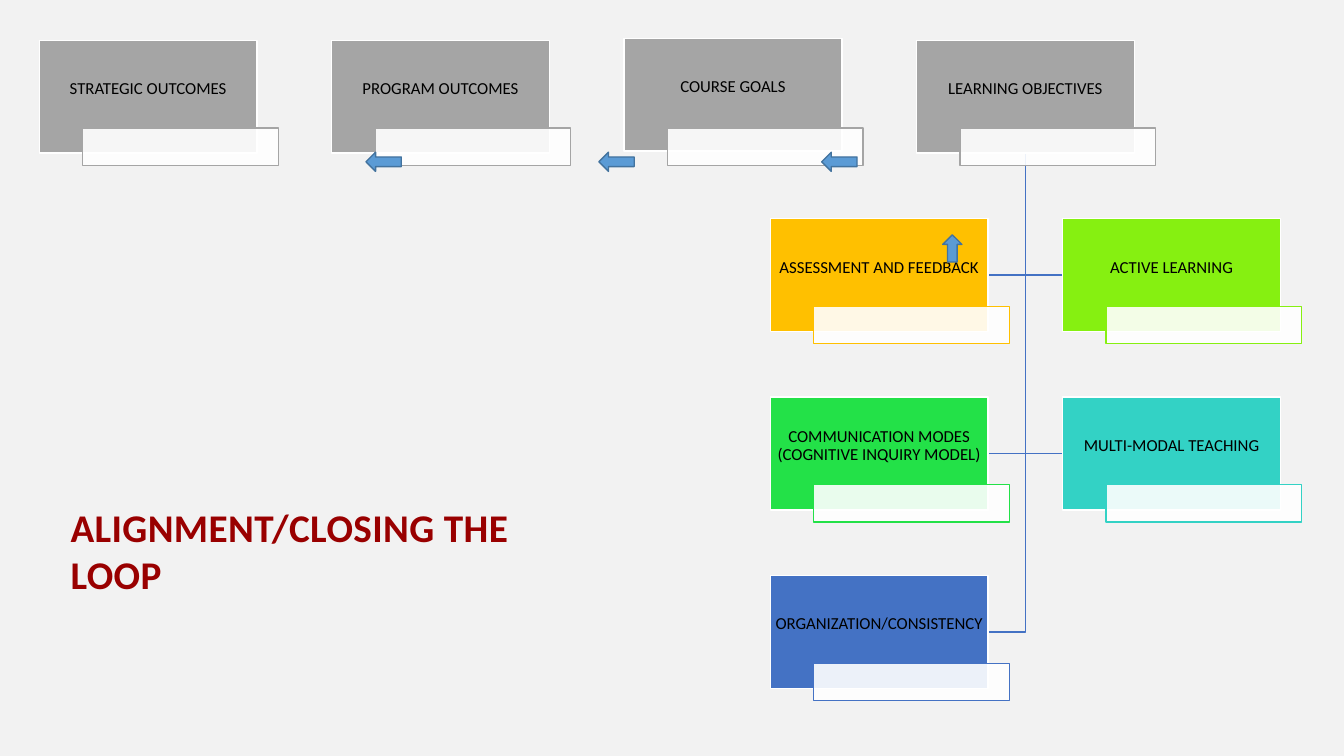
from lxml.etree import SubElement as Sub
from pptx import Presentation
from pptx.dml.color import RGBColor
from pptx.enum.shapes import MSO_SHAPE as Shape
from pptx.enum.text import MSO_ANCHOR as Anchor, MSO_AUTO_SIZE as Fit, PP_ALIGN as Align
from pptx.oxml.ns import qn
from pptx.util import Inches, Pt

GREY, BLUE, WHITE = "A5A5A5", "4472C4", "FFFFFF"


def rgb(code):
    """Turn a hex string into a colour."""
    return RGBColor.from_string(code)


class Board:
    """Style, grid and current slide of the alignment chart."""

    left, top = 0.39, 0.4
    col, row = 1.45, 1.77
    wide, high = 2.16, 1.12
    face = "Calibri"

    def __init__(self, deck):
        """Add a slide with a pale background."""
        self.slide = deck.slides.add_slide(deck.slide_layouts[5])
        self.shapes = self.slide.shapes
        fill = self.slide.background.fill
        fill.solid()
        fill.fore_color.rgb = rgb("F2F2F2")

    def spot(self, col, row):
        """Return the corner of a grid cell in inches."""
        return self.left + col * self.col, self.top + row * self.row

    def font(self, para, size, color, bold=False):
        """Set the font of a paragraph."""
        font = para.font
        font.name, font.size, font.bold = self.face, Pt(size), bold
        font.color.rgb = rgb(color)

    def block(self, kind, x, y, w, h, fill, edge):
        """Draw a filled preset shape."""
        shape = self.shapes.add_shape(kind, *map(Inches, (x, y, w, h)))
        shape.shadow.inherit = False
        shape.fill.solid()
        shape.fill.fore_color.rgb = rgb(fill)
        shape.line.color.rgb = rgb(edge)
        shape.line.width = Pt(1)
        return shape

    def card(self, text, col, row, color, lift=0):
        """Draw a labelled box with its translucent tab."""
        x, y = self.spot(col, row)
        box = self.block(Shape.RECTANGLE, x, y - lift, self.wide, self.high, color, WHITE)
        frame = box.text_frame
        frame.word_wrap = True
        frame.vertical_anchor = Anchor.MIDDLE
        frame.margin_left = frame.margin_right = frame.margin_top = Inches(0.01)
        frame.margin_bottom = Inches(0.16)
        para = frame.paragraphs[0]
        para.text, para.alignment, para.line_spacing = text, Align.CENTER, 0.9
        self.font(para, 12, "000000")
        tab = self.block(Shape.RECTANGLE, x + 0.43, y + 0.87, 1.94, 0.37, WHITE, color)
        tint = tab.fill._xPr.find(qn("a:solidFill"))[0]
        Sub(tint, qn("a:alpha"), val="90000")

    def branch(self, col, row):
        """Link the last top box to a box below it."""
        x, y = self.spot(6, 0)
        stem = x + self.wide / 2
        side, level = self.spot(col, row)
        end = side + self.wide if side < x else side
        level += self.high / 2
        pen = self.shapes.build_freeform(Inches(stem), Inches(y + self.high))
        pen.add_line_segments([(Inches(stem), Inches(level)),
                               (Inches(end), Inches(level))], close=False)
        line = pen.convert_to_shape()
        line.shadow.inherit = False
        line.fill.background()
        line.line.color.rgb = rgb(BLUE)
        line.line.width = Pt(1)

    def arrow(self, kind, x, y, w, h):
        """Draw a blue block arrow."""
        self.block(kind, x, y, w, h, "5B9BD5", "43739E")

    def title(self, text, x, y, w, h):
        """Place and format the title."""
        head = self.shapes.title
        head.left, head.top, head.width, head.height = map(Inches, (x, y, w, h))
        frame = head.text_frame
        frame.word_wrap, frame.auto_size = True, Fit.NONE
        frame.vertical_anchor = Anchor.TOP
        para = frame.paragraphs[0]
        para.text, para.alignment = text, Align.LEFT
        para.line_spacing = 1.0
        self.font(para, 28, "990000", True)
        para.runs[0].font._element.set("spc", "30")


def main():
    """Build the slide and save it."""
    deck = Presentation()
    deck.slide_width, deck.slide_height = Inches(13.33), Inches(7.5)
    board = Board(deck)
    goals = ["STRATEGIC OUTCOMES", "PROGRAM OUTCOMES", "COURSE GOALS", "LEARNING OBJECTIVES"]
    means = [
        ("ASSESSMENT AND FEEDBACK", 5, 1, "FFC000"),
        ("ACTIVE LEARNING", 7, 1, "86F011"),
        ("COMMUNICATION MODES (COGNITIVE INQUIRY MODEL)", 5, 2, "23E148"),
        ("MULTI-MODAL TEACHING", 7, 2, "33D2C5"),
        ("ORGANIZATION/CONSISTENCY", 5, 3, BLUE),
    ]
    for text, col, row, color in reversed(means):
        board.branch(col, row)
    for i, text in enumerate(goals):
        board.card(text, 2 * i, 0, GREY, 0.02 if text == "COURSE GOALS" else 0)
    for mean in means:
        board.card(*mean)
    for x in (8.15, 5.94, 3.63):
        board.arrow(Shape.LEFT_ARROW, x, 1.51, 0.35, 0.19)
    board.arrow(Shape.UP_ARROW, 9.35, 2.33, 0.19, 0.27)
    board.title("ALIGNMENT/CLOSING THE LOOP", 0.6, 4.94, 5.51, 1.04)
    deck.save("out.pptx")


if __name__ == "__main__":
    main()
